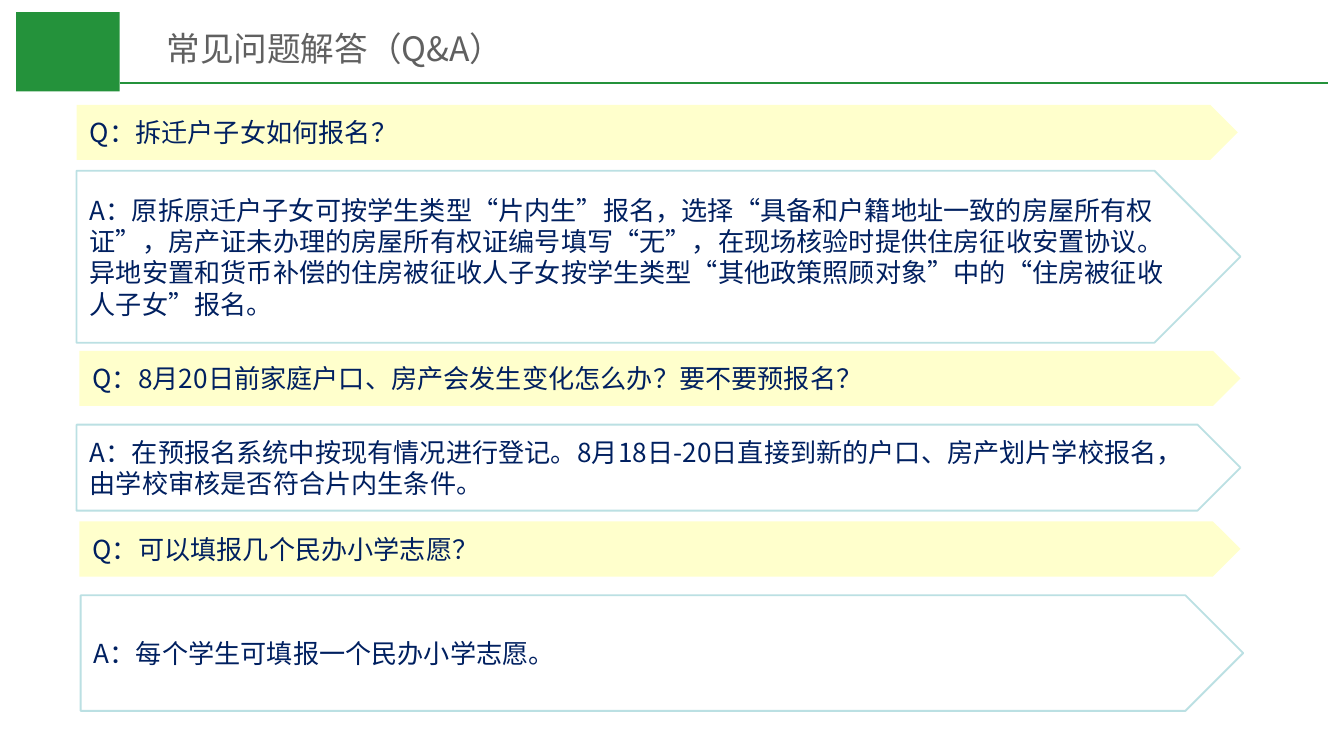
from lxml.etree import SubElement
from pptx import Presentation
from pptx.dml.color import RGBColor
from pptx.enum.shapes import MSO_CONNECTOR, MSO_SHAPE
from pptx.enum.text import MSO_ANCHOR, PP_ALIGN
from pptx.oxml.ns import qn
from pptx.util import Inches, Pt

COLORS = {
    "green": "24923B",
    "title": "606060",
    "question": "FFFFCC",
    "answer": "BBE0E3",
    "text": "002060",
}
FONT = "Noto Sans CJK SC"


def color(name):
    return RGBColor.from_string(COLORS[name])


def write_text(shape, text, size, color_name, anchor):
    text_frame = shape.text_frame
    text_frame.word_wrap = True
    text_frame.vertical_anchor = anchor
    text_frame.text = text
    paragraph = text_frame.paragraphs[0]
    paragraph.alignment = PP_ALIGN.LEFT
    font = paragraph.runs[0].font
    font.size = Pt(size)
    font.name = FONT
    font.color.rgb = color(color_name)
    # East Asian characters take their own typeface element
    SubElement(font._element, qn("a:ea"), typeface=FONT)
    return paragraph


# Widescreen 16:9 slide
presentation = Presentation()
presentation.slide_width = Inches(10)
presentation.slide_height = Inches(10 * 9 / 16)
slide = presentation.slides.add_slide(presentation.slide_layouts[6])

# Header: green block, rule and title
block = slide.shapes.add_shape(
    MSO_SHAPE.RECTANGLE, Inches(0.12), Inches(0.09), Inches(0.77), Inches(0.59))
block.shadow.inherit = False
block.fill.solid()
block.fill.fore_color.rgb = color("green")
block.line.fill.background()

rule = slide.shapes.add_connector(
    MSO_CONNECTOR.STRAIGHT, Inches(0.89), Inches(0.62), Inches(9.88), Inches(0.62))
rule.line.color.rgb = color("green")
rule.line.width = Pt(1)
SubElement(rule._element.spPr, qn("a:effectLst"))

title = slide.shapes.add_textbox(Inches(1.14), Inches(0.14), Inches(8.5), Inches(0.42))
write_text(title, "常见问题解答（Q&A）", 18, "title", MSO_ANCHOR.BOTTOM)

# Questions and answers: left, top, width, height, text
entries = [
    (0.57, 0.78, 8.64, 0.41, "Q：拆迁户子女如何报名？"),
    (0.57, 1.27, 8.66, 1.28,
     "A：原拆原迁户子女可按学生类型“片内生”报名，选择“具备和户籍地址一致的房屋所有权证”，"
     "房产证未办理的房屋所有权证编号填写“无”，在现场核验时提供住房征收安置协议。"
     "异地安置和货币补偿的住房被征收人子女按学生类型“其他政策照顾对象”中的"
     "“住房被征收人子女”报名。"),
    (0.59, 2.61, 8.64, 0.41,
     "Q：8月20日前家庭户口、房产会发生变化怎么办？要不要预报名？"),
    (0.57, 3.16, 8.66, 0.64,
     "A：在预报名系统中按现有情况进行登记。8月18日-20日直接到新的户口、房产划片学校报名，"
     "由学校审核是否符合片内生条件。"),
    (0.59, 3.88, 8.64, 0.41, "Q：可以填报几个民办小学志愿？"),
    (0.6, 4.43, 8.65, 0.86, "A：每个学生可填报一个民办小学志愿。"),
]
for left, top, width, height, text in entries:
    banner = slide.shapes.add_shape(
        MSO_SHAPE.PENTAGON, Inches(left), Inches(top), Inches(width), Inches(height))
    banner.shadow.inherit = False
    if text.startswith("Q"):
        banner.fill.solid()
        banner.fill.fore_color.rgb = color("question")
        banner.line.fill.background()
    else:
        banner.fill.background()
        banner.line.color.rgb = color("answer")
        banner.line.width = Pt(1)
    paragraph = write_text(banner, text, 14, "text", MSO_ANCHOR.MIDDLE)
    paragraph.line_spacing = Pt(16.8)

presentation.save("out.pptx")
